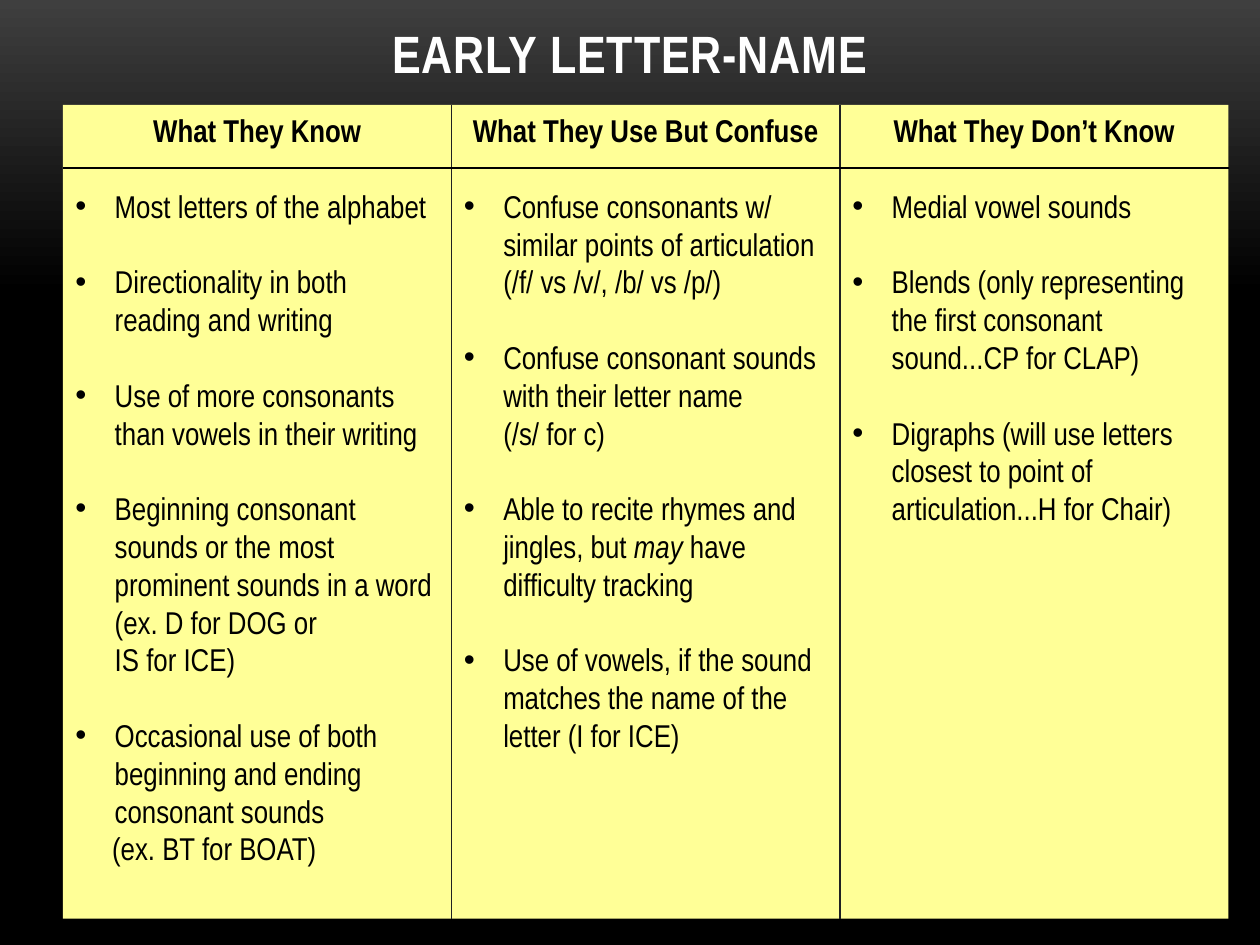
from lxml import etree
from pptx import Presentation, util as u
from pptx.dml import color
from pptx.enum import shapes, text
from pptx.oxml import ns

PX = 9525  # EMU in one px, 96 px to the inch


def px(length):
    return u.Emu(length * PX)


def rgb(hex_string):
    return color.RGBColor.from_string(hex_string)


class Deck:
    FONT = "Arial Narrow"
    INK, PAPER, WHITE = "000000", "FFFF97", "FFFFFF"
    BODY_SIZE, TITLE_SIZE, GAP = 18, 30, 21.6
    HANG = 30

    def __init__(self, width, height):
        self.prs = Presentation()
        self.prs.slide_width, self.prs.slide_height = px(width), px(height)
        self.slide = self.prs.slides.add_slide(self.prs.slide_layouts[5])

    def background(self, top, bottom, fade_end):
        fill = self.slide.background.fill
        fill.gradient()
        fill.gradient_angle = 270
        for stop, hex_string, position in zip(
                fill.gradient_stops, (top, bottom), (0, fade_end)):
            stop.color.rgb = rgb(hex_string)
            stop.position = position

    def style(self, paragraph, size, hex_string, bold=False):
        font = paragraph.font
        font.name, font.size, font.bold = self.FONT, u.Pt(size), bold
        font.color.rgb = rgb(hex_string)

    def title(self, words, left, top, width, height):
        title = self.slide.shapes.title
        title.left, title.top = px(left), px(top)
        title.width, title.height = px(width), px(height)
        frame = title.text_frame
        frame.vertical_anchor = text.MSO_ANCHOR.BOTTOM
        frame.text = words
        heading = frame.paragraphs[0]
        heading.alignment = text.PP_ALIGN.CENTER
        self.style(heading, self.TITLE_SIZE, self.WHITE, bold=True)
        heading.runs[0].font._element.set("spc", "50")

    def add_words(self, paragraph, words):
        """Add runs; *stars* mark italics and a newline breaks the line."""
        for line_number, line in enumerate(words.split("\n")):
            if line_number:
                paragraph.add_line_break()
            for part_number, part in enumerate(line.split("*")):
                if part:
                    run = paragraph.add_run()
                    run.text = part
                    if part_number % 2:
                        run.font.italic = True

    def item(self, frame, words, indent, bullet=True):
        paragraph = frame.add_paragraph()
        paragraph.alignment = text.PP_ALIGN.LEFT
        paragraph.space_before = u.Pt(self.GAP if bullet else 0)
        props = paragraph._p.get_or_add_pPr()
        props.set("marL", str(px(indent)))
        props.set("indent", str(px(-indent if bullet else 0)))
        if bullet:
            etree.SubElement(props, ns.qn("a:buFont")).set("typeface", "Arial")
            etree.SubElement(props, ns.qn("a:buChar")).set("char", "•")
        self.style(paragraph, self.BODY_SIZE, self.INK)
        self.add_words(paragraph, words)

    def column(self, heading, items, left, top, width, height, example=None):
        panel = self.slide.shapes.add_shape(
            shapes.MSO_SHAPE.RECTANGLE, px(left), px(top), px(width), px(height))
        panel.shadow.inherit = False
        panel.fill.solid()
        panel.fill.fore_color.rgb = rgb(self.PAPER)
        panel.line.fill.background()
        frame = panel.text_frame
        frame.word_wrap = True
        frame.vertical_anchor = text.MSO_ANCHOR.TOP
        first = frame.paragraphs[0]
        first.alignment = text.PP_ALIGN.CENTER
        self.style(first, self.BODY_SIZE, self.INK, bold=True)
        self.add_words(first, heading)
        for words in items:
            self.item(frame, words, self.HANG)
        if example:
            self.item(frame, example, self.HANG - 2, bullet=False)

    def rule(self, x1, y1, x2, y2, hex_string):
        rule = self.slide.shapes.add_connector(
            shapes.MSO_CONNECTOR.STRAIGHT, px(x1), px(y1), px(x2), px(y2))
        rule.line.color.rgb = rgb(hex_string)
        rule.line.width = u.Pt(0.75)
        etree.SubElement(rule._element.spPr, ns.qn("a:effectLst"))


COLUMNS = [
    ("What They Know", [
        "Most letters of the alphabet",
        "Directionality in both reading and writing",
        "Use of more consonants than vowels in their writing",
        "Beginning consonant sounds or the most prominent sounds in a word "
        "(ex. D for DOG or\nIS for ICE)",
        "Occasional use of both beginning and ending consonant sounds",
    ], "(ex. BT for BOAT)"),
    ("What They Use But Confuse", [
        "Confuse consonants w/ similar points of articulation "
        "(/f/ vs /v/, /b/ vs /p/)",
        "Confuse consonant sounds with their letter name\n(/s/ for c)",
        "Able to recite rhymes and jingles, but *may *have difficulty tracking",
        "Use of vowels, if the sound matches the name of the letter (I for ICE)",
    ], None),
    ("What They Don’t Know", [
        "Medial vowel sounds",
        "Blends (only representing the first consonant sound...CP for CLAP)",
        "Digraphs (will use letters closest to point of articulation"
        "...H for Chair)",
    ], None),
]


def main():
    left, top, width, height = 48, 80, 296, 620
    deck = Deck(960, 720)
    deck.background("3F3F3F", "000000", 0.31)
    deck.title("EARLY LETTER-NAME", 64, -8, 832, 77)

    # Three columns side by side
    edges = [left + width * n for n in range(len(COLUMNS) + 1)]
    for edge, (heading, items, example) in zip(edges, COLUMNS):
        deck.column(heading, items, edge, top, width, height, example)

    # Rules between the columns and under the headings
    for edge in edges[1:-1]:
        deck.rule(edge, top, edge, top + height, "1F2123")
    deck.rule(left, 128, edges[-1], 128, "000000")

    deck.prs.save("out.pptx")


if __name__ == "__main__":
    main()
